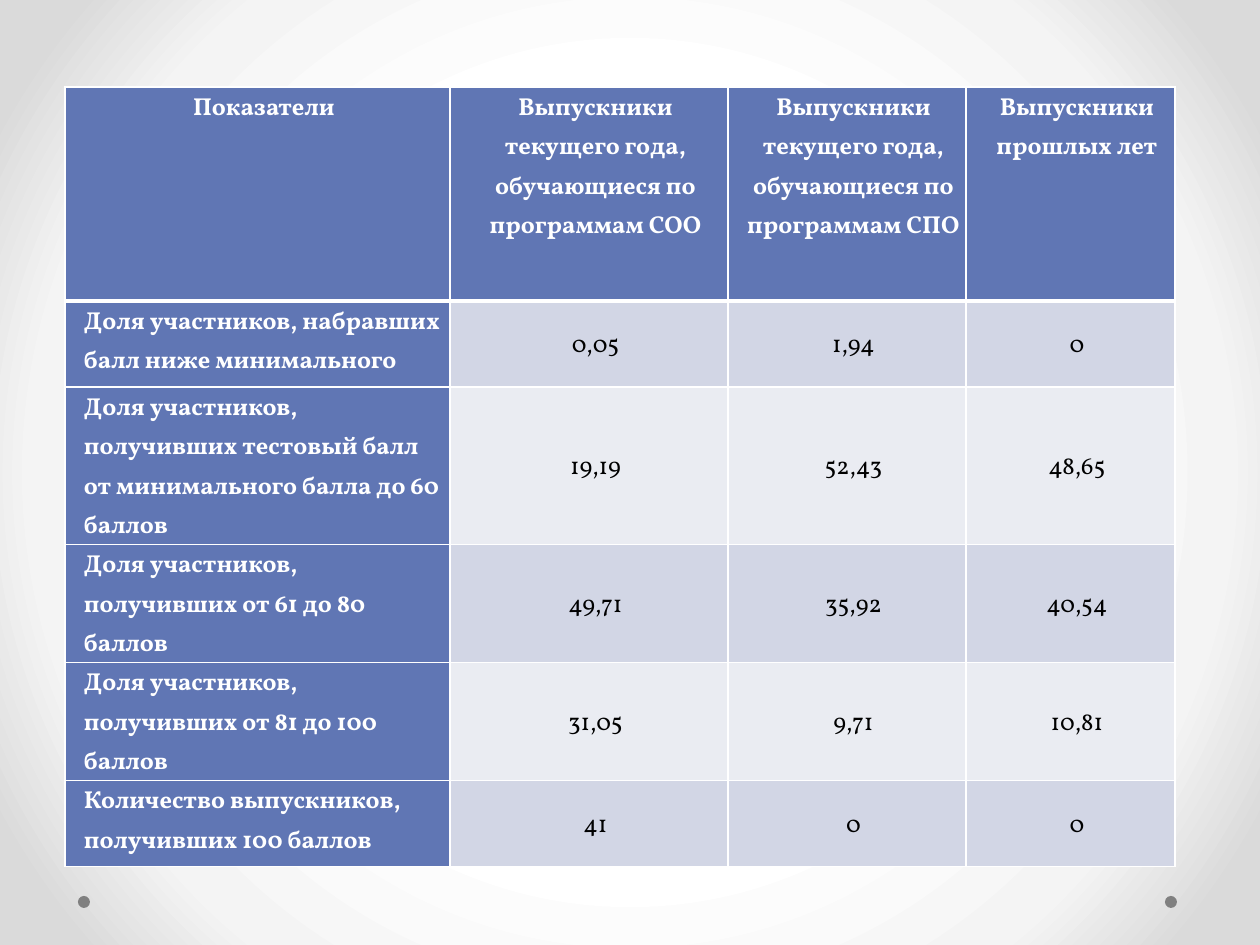
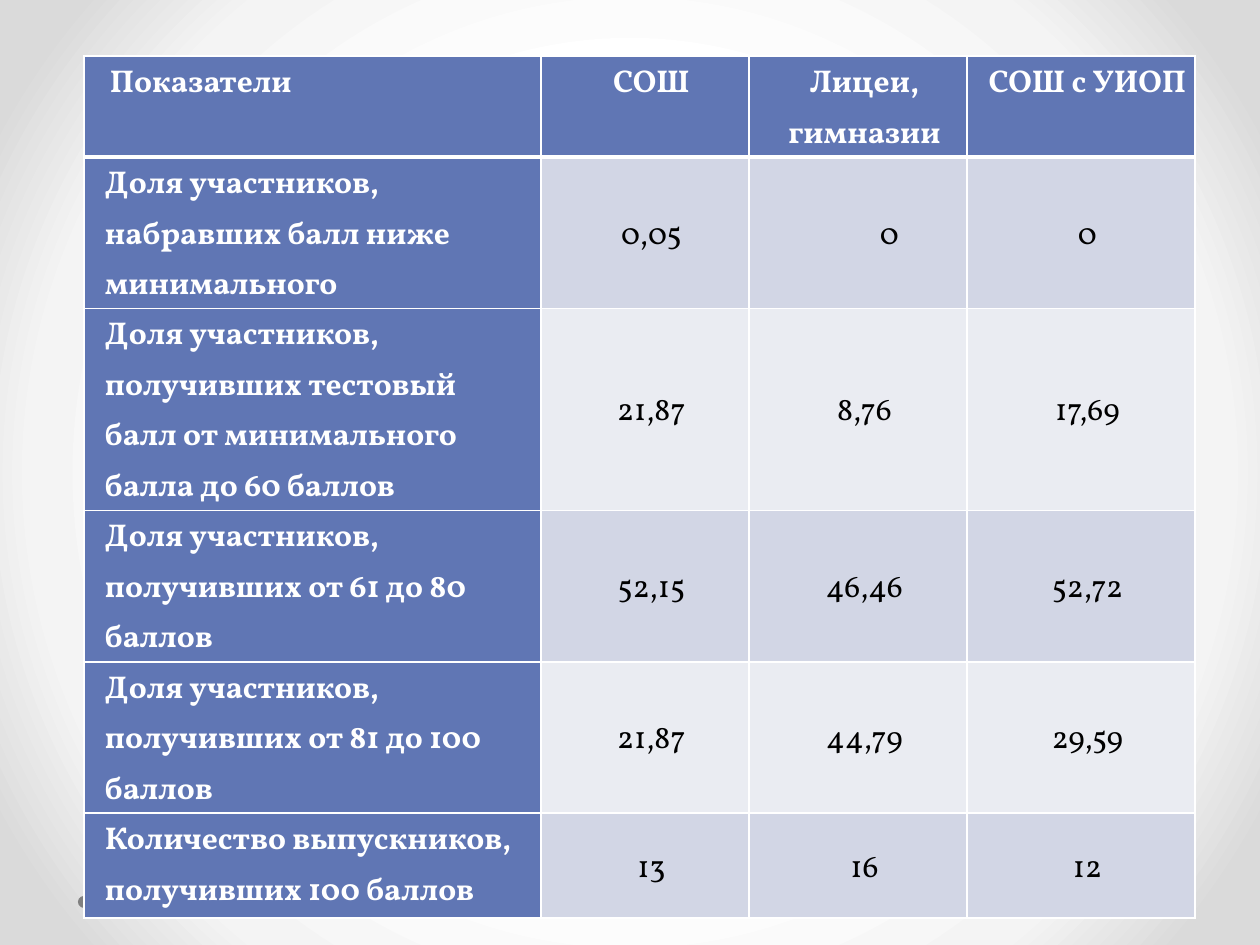
from dataclasses import dataclass, field

from lxml.etree import SubElement
from pptx import Presentation
from pptx.dml.color import RGBColor as Rgb
from pptx.enum.shapes import MSO_SHAPE as Shape
from pptx.enum.text import MSO_ANCHOR as Anchor, PP_ALIGN as Align
from pptx.oxml import parse_xml
from pptx.oxml.ns import nsdecls, qn
from pptx.util import Pt

SCALE = 914400 / 126
FONT = "Vollkorn"
HUES = {
    "head": "6076B4",
    "odd": "D2D6E5",
    "even": "EAECF2",
    "line": "FFFFFF",
    "light": "FFFFFF",
    "dark": "000000",
    "dot": "808080",
}
GLOW = [(50, "FFFFFF"), (76, "F4F4F4"), (92, "DADADA")]
DOTS = [(1165, 896), (78, 896)]
DOT = 12
LABELS = [
    "Доля участников, набравших балл ниже минимального",
    "Доля участников, получивших тестовый балл от минимального балла до 60 баллов",
    "Доля участников, получивших от 61 до 80 баллов",
    "Доля участников, получивших от 81 до 100 баллов",
    "Количество выпускников, получивших 100 баллов",
]


@dataclass(frozen=True)
class Para:
    left: int = 13
    first: int = 0
    align: Align = Align.CENTER


@dataclass(frozen=True)
class Grid:
    left: int
    top: int
    cols: list[int]
    rows: list[int]
    size: int
    inset: int
    heads: list[str]
    data: list[list[str]]
    body: Para = Para()
    odd: dict[tuple[int, int], Para] = field(default_factory=dict)


GRIDS = [
    Grid(
        65, 87, [385, 278, 238, 209], [214, 86, 157, 118, 118, 86], 14, 6,
        ["Показатели",
         "Выпускники текущего года, обучающиеся по программам СОО",
         "Выпускники текущего года, обучающиеся по программам СПО",
         "Выпускники прошлых лет"],
        [["0,05", "1,94", "0"],
         ["19,19", "52,43", "48,65"],
         ["49,71", "35,92", "40,54"],
         ["31,05", "9,71", "10,81"],
         ["41", "0", "0"]],
    ),
    Grid(
        84, 56, [457, 208, 218, 228], [101, 151, 202, 151, 151, 105], 18, 8,
        ["Показатели", "СОШ", "Лицеи, гимназии", "СОШ с УИОП"],
        [["0,05", "0", "0"],
         ["21,87", "8,76", "17,69"],
         ["52,15", "46,46", "52,72"],
         ["21,87", "44,79", "29,59"],
         ["13", "16", "12"]],
        Para(63, -50),
        {(0, 0): Para(63, -45, Align.LEFT), (1, 2): Para(63)},
    ),
]


def px(num: int) -> int:
    return round(num * SCALE)


def hue(name: str) -> Rgb:
    return Rgb.from_string(HUES[name])


def set_glow(master) -> None:
    fill = master.background.fill
    fill.solid()
    stops = "".join(
        f'<a:gs pos="{pos * 1000}"><a:srgbClr val="{tint}"/></a:gs>'
        for pos, tint in GLOW
    )
    glow = parse_xml(
        f'<a:gradFill {nsdecls("a")} rotWithShape="1"><a:gsLst>{stops}</a:gsLst>'
        '<a:path path="circle">'
        '<a:fillToRect l="50000" t="50000" r="50000" b="50000"/>'
        "</a:path></a:gradFill>"
    )
    solid = next(master.element.iter(qn("a:solidFill")))
    solid.getparent().replace(solid, glow)


def add_dot(slide, left: int, top: int) -> None:
    dot = slide.shapes.add_shape(Shape.OVAL, px(left), px(top), px(DOT), px(DOT))
    dot.shadow.inherit = False
    dot.fill.solid()
    dot.fill.fore_color.rgb = hue("dot")
    dot.line.fill.background()


def add_lines(cell, row: int) -> None:
    props = cell._tc.get_or_add_tcPr()
    thick = {(0, "B"), (1, "T")}
    for side in "LRTB":
        width = Pt(3 if (row, side) in thick else 1)
        line = SubElement(props, qn(f"a:ln{side}"), w=str(width))
        paint = SubElement(line, qn("a:solidFill"))
        SubElement(paint, qn("a:srgbClr"), val=HUES["line"])


def fill_cell(cell, text: str, row: int, col: int, grid: Grid) -> None:
    bold = row == 0 or col == 0
    if bold:
        base = Para() if row == 0 else Para(align=Align.LEFT)
    else:
        base = grid.body
    look = grid.odd.get((row, col), base)
    add_lines(cell, row)
    cell.fill.solid()
    cell.fill.fore_color.rgb = hue("head" if bold else "odd" if row % 2 else "even")
    cell.margin_left = cell.margin_right = px(grid.inset)
    cell.margin_top = cell.margin_bottom = 0
    cell.vertical_anchor = Anchor.TOP if bold else Anchor.MIDDLE
    para = cell.text_frame.paragraphs[0]
    para.text = text
    para.alignment = look.align
    para.line_spacing = 1.15
    props = para._p.get_or_add_pPr()
    props.set("marL", str(px(look.left)))
    props.set("indent", str(px(look.first)))
    font = para.runs[0].font
    font.name = FONT
    font.size = Pt(grid.size)
    font.bold = bold
    font.color.rgb = hue("light" if bold else "dark")


def add_grid(slide, grid: Grid) -> None:
    texts = [grid.heads] + [[label, *row] for label, row in zip(LABELS, grid.data)]
    table = slide.shapes.add_table(
        len(grid.rows), len(grid.cols), px(grid.left), px(grid.top),
        px(sum(grid.cols)), px(sum(grid.rows)),
    ).table
    for col, width in zip(table.columns, grid.cols):
        col.width = px(width)
    for row, height in zip(table.rows, grid.rows):
        row.height = px(height)
    for row, line in enumerate(texts):
        for col, text in enumerate(line):
            fill_cell(table.cell(row, col), text, row, col, grid)


def main() -> None:
    deck = Presentation()
    deck.slide_width, deck.slide_height = px(1260), px(945)
    set_glow(deck.slide_master)
    for grid in GRIDS:
        slide = deck.slides.add_slide(deck.slide_layouts[6])
        for left, top in DOTS:
            add_dot(slide, left, top)
        add_grid(slide, grid)
    deck.save("out.pptx")


if __name__ == "__main__":
    main()
